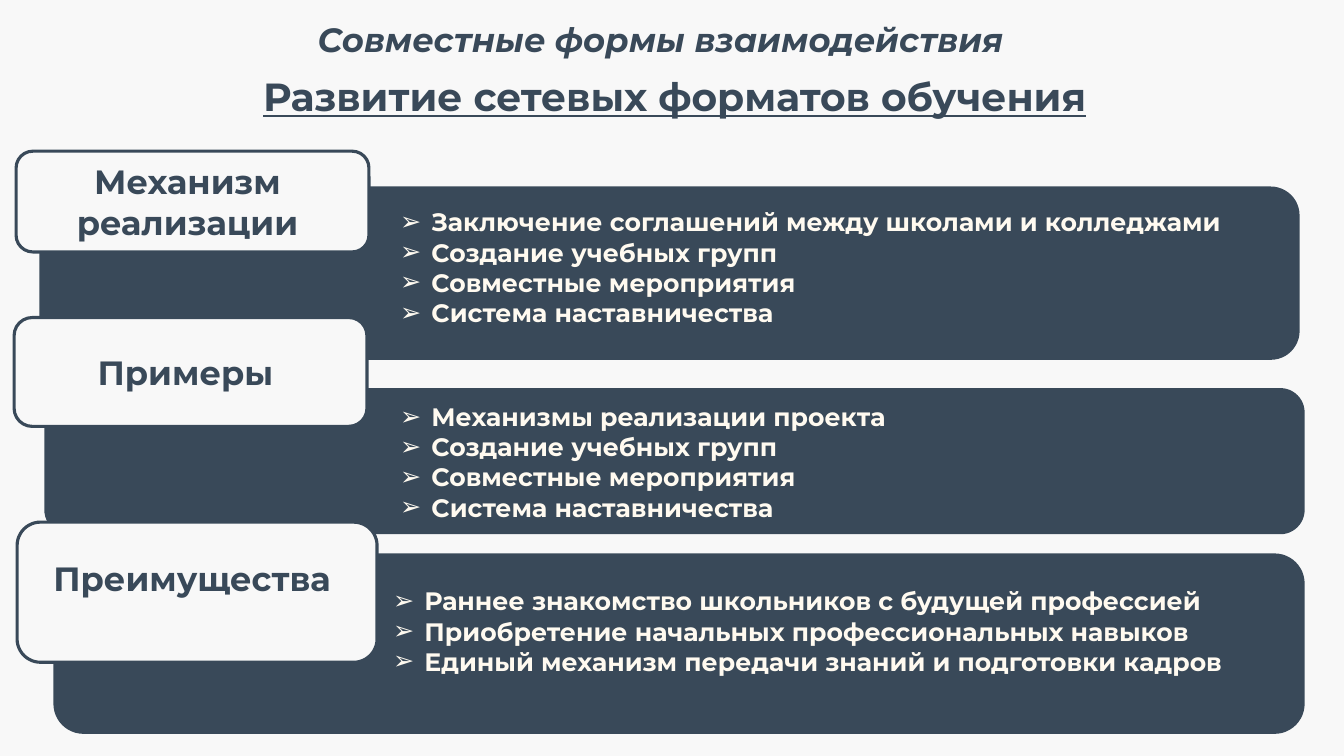
from dataclasses import dataclass

from lxml import etree
from pptx import Presentation
from pptx.dml.color import RGBColor
from pptx.enum.shapes import MSO_SHAPE
from pptx.enum.text import MSO_ANCHOR, MSO_AUTO_SIZE, PP_ALIGN
from pptx.oxml.ns import qn
from pptx.util import Inches, Pt

ROUNDED = MSO_SHAPE.ROUNDED_RECTANGLE
TOP, MIDDLE = MSO_ANCHOR.TOP, MSO_ANCHOR.MIDDLE
CENTER, LEFT = PP_ALIGN.CENTER, PP_ALIGN.LEFT
NO_AUTOFIT = MSO_AUTO_SIZE.NONE
TITLE_ONLY = 5

SUBTITLE = "Совместные формы взаимодействия"
TITLE = "Развитие сетевых форматов обучения"

# Boxes are left, top, width, height in inches; card_lift raises a label above the middle.
SECTIONS = [
    {
        "label": "Механизм реализации",
        "items": [
            "Заключение соглашений между школами и колледжами",
            "Создание учебных групп",
            "Совместные мероприятия",
            "Система наставничества",
        ],
        "panel": (0.39, 1.85, 12.5, 1.72),
        "card": (0.16, 1.5, 3.5, 1),
        "list": (3.97, 2.05, 8.7, 1.25),
        "card_lift": 0,
    },
    {
        "label": "Примеры",
        "items": [
            "Механизмы реализации проекта",
            "Создание учебных групп",
            "Совместные мероприятия",
            "Система наставничества",
        ],
        "panel": (0.44, 3.85, 12.5, 1.45),
        "card": (0.14, 3.15, 3.5, 1.08),
        "list": (3.97, 3.98, 8.7, 1.25),
        "card_lift": 0,
    },
    {
        "label": "Преимущества",
        "items": [
            "Раннее знакомство школьников с будущей профессией",
            "Приобретение начальных профессиональных навыков",
            "Единый механизм передачи знаний и подготовки кадров",
        ],
        "panel": (0.53, 5.49, 12.41, 1.79),
        "card": (0.17, 5.18, 3.57, 1.39),
        "list": (3.9, 5.81, 8.8, 0.95),
        "card_lift": 0.14,
    },
]


@dataclass(frozen=True)
class Theme:
    font: str = "Montserrat"
    paper: RGBColor = RGBColor(0xF8, 0xF8, 0xF8)
    slate: RGBColor = RGBColor(0x39, 0x49, 0x59)
    cream: RGBColor = RGBColor(0xFF, 0xFA, 0xF0)
    title_size: int = 28
    heading_size: int = 24
    list_size: int = 18
    border: float = 2.25


THEME = Theme()


def inches(box):
    return [Inches(value) for value in box]


def set_frame(frame, margins, anchor):
    """Margins are left, top, right, bottom in inches."""
    frame.word_wrap = True
    frame.auto_size = NO_AUTOFIT
    frame.vertical_anchor = anchor
    (frame.margin_left, frame.margin_top,
     frame.margin_right, frame.margin_bottom) = inches(margins)


def write(paragraph, text, size, color, alignment=CENTER, italic=False, underline=False):
    paragraph.alignment = alignment
    run = paragraph.add_run()
    run.text = text
    font = run.font
    font.name, font.size, font.bold = THEME.font, Pt(size), True
    font.italic, font.underline = italic, underline
    font.color.rgb = color


def add_bullet(paragraph):
    properties = paragraph._p.get_or_add_pPr()
    indent = Inches(0.31)
    properties.set("marL", str(indent))
    properties.set("indent", str(-indent))
    etree.SubElement(properties, qn("a:buFont"), typeface="Arial")
    etree.SubElement(properties, qn("a:buChar"), char="➢")


def add_rounded(slide, box, fill, border=None):
    shape = slide.shapes.add_shape(ROUNDED, *inches(box))
    shape.shadow.inherit = False
    shape.fill.solid()
    shape.fill.fore_color.rgb = fill
    if border is None:
        shape.line.fill.background()
    else:
        shape.line.color.rgb = border
        shape.line.width = Pt(THEME.border)
    return shape


def add_list(slide, box, items):
    frame = slide.shapes.add_textbox(*inches(box)).text_frame
    set_frame(frame, (0, 0, 0, 0), TOP)
    for index, item in enumerate(items):
        paragraph = frame.add_paragraph() if index else frame.paragraphs[0]
        write(paragraph, item, THEME.list_size, THEME.cream, LEFT)
        add_bullet(paragraph)


def add_card(slide, section):
    card = add_rounded(slide, section["card"], THEME.paper, THEME.slate)
    bottom = 0.05 + 2 * section["card_lift"]
    set_frame(card.text_frame, (0.05, 0.05, 0.15, bottom), MIDDLE)
    write(card.text_frame.paragraphs[0], section["label"], THEME.heading_size, THEME.slate)


def add_headings(slide):
    margins = (0.1, 0.05, 0.1, 0.05)
    subtitle = slide.shapes.add_textbox(*inches((0, 0.14, 13.1, 0.5))).text_frame
    set_frame(subtitle, margins, TOP)
    write(subtitle.paragraphs[0], SUBTITLE, THEME.heading_size, THEME.slate, italic=True)

    title = slide.shapes.title
    title.left, title.top, title.width, title.height = inches((0.14, 0.67, 13.1, 0.57))
    set_frame(title.text_frame, margins, TOP)
    write(title.text_frame.paragraphs[0], TITLE, THEME.title_size, THEME.slate, underline=True)


def main():
    presentation = Presentation()
    presentation.slide_width, presentation.slide_height = inches((13.33, 7.5))
    slide = presentation.slides.add_slide(presentation.slide_layouts[TITLE_ONLY])
    slide.background.fill.solid()
    slide.background.fill.fore_color.rgb = THEME.paper

    add_headings(slide)
    for section in SECTIONS:
        add_rounded(slide, section["panel"], THEME.slate)
        add_list(slide, section["list"], section["items"])
    for section in SECTIONS:
        add_card(slide, section)
    presentation.save("out.pptx")


if __name__ == "__main__":
    main()
